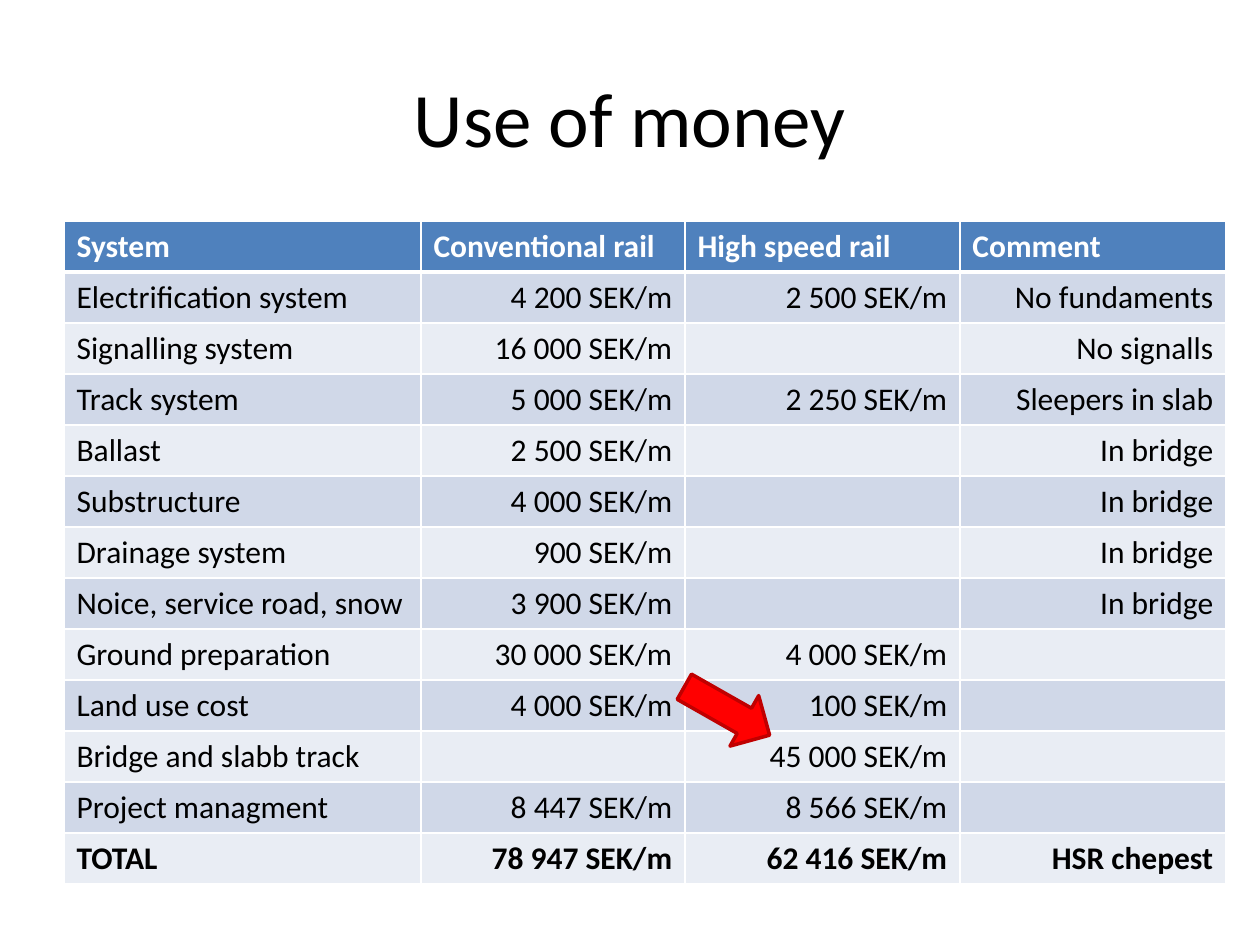
from dataclasses import dataclass

from lxml import etree
from pptx import Presentation
from pptx import util as u
from pptx.dml import color
from pptx.enum import shapes, text
from pptx.oxml import ns

SCALE = 914400 / 126
HUES = {
    "head": "4F81BD", "odd": "D0D8E8", "even": "E9EDF4",
    "white": "FFFFFF", "black": "000000", "red": "FF0000", "edge": "C00000",
}
COLS = (357, 264, 275, 266)
ROW_H = 51


@dataclass(frozen=True)
class Cost:
    name: str
    rail: str = ""
    fast: str = ""
    note: str = ""


HEAD = Cost("System", "Conventional rail", "High speed rail", "Comment")
COSTS = (
    Cost("Electrification system", "4 200 SEK/m", "2 500 SEK/m", "No fundaments"),
    Cost("Signalling system", "16 000 SEK/m", note="No signalls"),
    Cost("Track system", "5 000 SEK/m", "2 250 SEK/m", "Sleepers in slab"),
    Cost("Ballast", "2 500 SEK/m", note="In bridge"),
    Cost("Substructure", "4 000 SEK/m", note="In bridge"),
    Cost("Drainage system", "900 SEK/m", note="In bridge"),
    Cost("Noice, service road, snow", "3 900 SEK/m", note="In bridge"),
    Cost("Ground preparation", "30 000 SEK/m", "4 000 SEK/m"),
    Cost("Land use cost", "4 000 SEK/m", "100 SEK/m"),
    Cost("Bridge and slabb track", fast="45 000 SEK/m"),
    Cost("Project managment", "8 447 SEK/m", "8 566 SEK/m"),
    Cost("TOTAL", "78 947 SEK/m", "62 416 SEK/m", "HSR chepest"),
)


def px(size: int) -> u.Emu:
    return u.Emu(round(size * SCALE))


def hue(name: str) -> color.RGBColor:
    return color.RGBColor.from_string(HUES[name])


def write(frame, words: str, size: int = 18, tone: str = "black",
          bold: bool = False, side: str = "LEFT") -> None:
    para = frame.paragraphs[0]
    para.alignment = getattr(text.PP_ALIGN, side)
    para.font.size = u.Pt(size)
    if words:
        run = para.add_run()
        run.text = words
        run.font.name = "Calibri"
        run.font.size = u.Pt(size)
        run.font.bold = bold
        run.font.color.rgb = hue(tone)


def rule(cell, top: int, base: int) -> None:
    props = cell._tc.get_or_add_tcPr()
    for side, width in (("L", 1), ("R", 1), ("T", top), ("B", base)):
        line = etree.SubElement(props, ns.qn(f"a:ln{side}"), w=str(u.Pt(width)))
        fill = etree.SubElement(line, ns.qn("a:solidFill"))
        etree.SubElement(fill, ns.qn("a:srgbClr"), val=HUES["white"])


def draw_row(table, at: int, cost: Cost) -> None:
    head = at == 0
    bold = head or at == len(COSTS)
    shade = "head" if head else "odd" if at % 2 else "even"
    words = (cost.name, cost.rail, cost.fast, cost.note)
    for col, word in enumerate(words):
        cell = table.cell(at, col)
        rule(cell, 3 if at == 1 else 1, 3 if head else 1)
        cell.fill.solid()
        cell.fill.fore_color.rgb = hue(shade)
        write(cell.text_frame, word, tone="white" if head else "black", bold=bold,
              side="LEFT" if head or col == 0 else "RIGHT")


def draw_title(slide) -> None:
    box = slide.shapes.add_textbox(px(63), px(38), px(1134), px(158))
    frame = box.text_frame
    frame.word_wrap = True
    frame.vertical_anchor = text.MSO_ANCHOR.MIDDLE
    write(frame, "Use of money", size=44, side="CENTER")


def draw_table(slide) -> None:
    rows = (HEAD, *COSTS)
    table = slide.shapes.add_table(
        len(rows), len(COLS), px(64), px(221),
        px(sum(COLS)), px(ROW_H * len(rows))).table
    for col, width in zip(table.columns, COLS):
        col.width = px(width)
    for at, cost in enumerate(rows):
        table.rows[at].height = px(ROW_H)
        draw_row(table, at, cost)


def draw_arrow(slide) -> None:
    arrow = slide.shapes.add_shape(
        shapes.MSO_SHAPE.RIGHT_ARROW, px(678), px(682), px(98), px(58))
    arrow.rotation = 29.6
    arrow.shadow.inherit = False
    arrow.fill.solid()
    arrow.fill.fore_color.rgb = hue("red")
    arrow.line.color.rgb = hue("edge")
    arrow.line.width = u.Pt(2)


def main() -> None:
    deck = Presentation()
    deck.slide_width, deck.slide_height = px(1260), px(945)
    slide = deck.slides.add_slide(deck.slide_layouts[6])
    draw_title(slide)
    draw_table(slide)
    draw_arrow(slide)
    deck.save("out.pptx")


if __name__ == "__main__":
    main()
